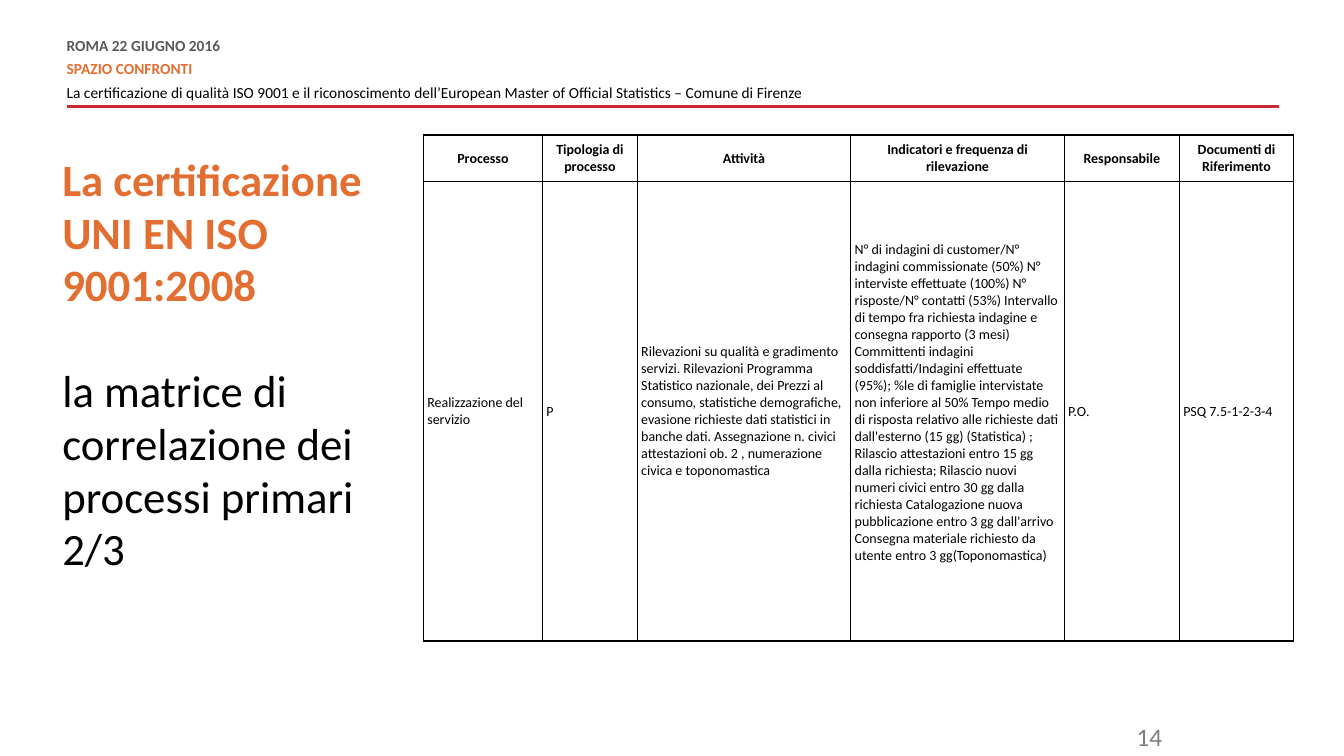
"""Build the slide with the matrix of primary processes."""
from dataclasses import dataclass

from lxml import etree
from pptx import Presentation
from pptx.dml.color import RGBColor
from pptx.enum.shapes import MSO_CONNECTOR
from pptx.enum.text import MSO_ANCHOR, PP_ALIGN
from pptx.oxml.ns import qn
from pptx.util import Cm, Pt

LEFT, CENTER, RIGHT = PP_ALIGN.LEFT, PP_ALIGN.CENTER, PP_ALIGN.RIGHT
TOP, MIDDLE = MSO_ANCHOR.TOP, MSO_ANCHOR.MIDDLE
STRAIGHT = MSO_CONNECTOR.STRAIGHT
FONT = "Calibri"
BLACK, ORANGE, RED = "000000", "E26F31", "C72A31"
DARK, GREY = "595959", "7F7F7F"


@dataclass
class Column:
    """One column of the matrix, with the space kept under its body."""
    width: float
    head: str
    body: str
    base: float = 0


@dataclass
class Line:
    """One line of the page header."""
    text: str
    hue: str
    bold: bool


HEADER = [
    Line("ROMA 22 GIUGNO 2016", DARK, True),
    Line("SPAZIO CONFRONTI", ORANGE, True),
    Line("La certificazione di qualità ISO 9001 e il riconoscimento dell’European "
         "Master of Official Statistics – Comune di Firenze", BLACK, False),
]

COLUMNS = [
    Column(3, "Processo", "Realizzazione del servizio"),
    Column(2.39, "Tipologia di processo", "P"),
    Column(5.38, "Attività",
           "Rilevazioni su qualità e gradimento servizi. Rilevazioni Programma "
           "Statistico nazionale, dei Prezzi al consumo, statistiche demografiche, "
           "evasione richieste dati statistici in banche dati. Assegnazione n. civici "
           "attestazioni ob. 2 , numerazione civica e toponomastica"),
    Column(5.38, "Indicatori e frequenza di rilevazione",
           "N° di indagini di customer/N° indagini commissionate (50%) N° interviste "
           "effettuate (100%) N° risposte/N° contatti (53%) Intervallo di tempo fra "
           "richiesta indagine e consegna rapporto (3 mesi) Committenti indagini "
           "soddisfatti/Indagini effettuate (95%); %le di famiglie intervistate non "
           "inferiore al 50% Tempo medio di risposta relativo alle richieste dati "
           "dall'esterno (15 gg) (Statistica) ; Rilascio attestazioni entro 15 gg "
           "dalla richiesta; Rilascio nuovi numeri civici entro 30 gg dalla richiesta "
           "Catalogazione nuova pubblicazione entro 3 gg dall'arrivo Consegna "
           "materiale richiesto da utente entro 3 gg(Toponomastica)", 0.43),
    Column(2.9, "Responsabile", "P.O."),
    Column(2.88, "Documenti di Riferimento", "PSQ 7.5-1-2-3-4"),
]
ROWS = [1.18, 11.57]


def paint(hue: str) -> RGBColor:
    """Turn a hex string into a colour."""
    return RGBColor.from_string(hue)


def write(frame, text: str, *, size: float, hue: str = BLACK, bold: bool = False,
          align=LEFT, pitch=1.0, before: float = 0, after: float = 0) -> None:
    """Add one formatted paragraph to a text frame."""
    para = frame.paragraphs[0]
    if para.runs:
        para = frame.add_paragraph()
    para.text = text
    para.alignment, para.line_spacing = align, pitch
    para.space_before, para.space_after = Pt(before), Pt(after)
    for run in para.runs:
        font = run.font
        font.name, font.size, font.bold = FONT, Pt(size), bold
        font.color.rgb = paint(hue)


def add_box(slide, left: float, top: float, width: float, height: float,
            anchor=TOP):
    """Add a wrapping text box without insets and return its frame."""
    box = slide.shapes.add_textbox(Cm(left), Cm(top), Cm(width), Cm(height))
    frame = box.text_frame
    frame.word_wrap, frame.vertical_anchor = True, anchor
    frame.margin_left = frame.margin_right = 0
    frame.margin_top = frame.margin_bottom = 0
    return frame


def add_rule(slide) -> None:
    """Draw the red rule under the header."""
    rule = slide.shapes.add_connector(STRAIGHT, Cm(32.23), Cm(2.69), Cm(1.68), Cm(2.69))
    rule.line.color.rgb, rule.line.width = paint(RED), Pt(2)
    etree.SubElement(rule._element.spPr, qn("a:effectLst"))


def edge(cell) -> None:
    """Give a cell thin black borders and no fill."""
    props = cell._tc.get_or_add_tcPr()
    for side in ("lnL", "lnR", "lnT", "lnB"):
        line = etree.SubElement(props, qn(f"a:{side}"), w=str(Pt(1)))
        fill = etree.SubElement(line, qn("a:solidFill"))
        etree.SubElement(fill, qn("a:srgbClr"), val=BLACK)
    cell.fill.background()


def fill_cell(cell, text: str, *, base: float = 0, bold: bool = False,
              align=LEFT) -> None:
    """Set the text, insets and borders of a cell."""
    cell.vertical_anchor = MIDDLE
    cell.margin_left = cell.margin_right = Cm(0.1)
    cell.margin_top, cell.margin_bottom = 0, Cm(base)
    write(cell.text_frame, text, size=10, bold=bold, align=align)
    edge(cell)


def add_matrix(slide) -> None:
    """Add the table of processes."""
    width = sum(col.width for col in COLUMNS)
    frame = slide.shapes.add_table(len(ROWS), len(COLUMNS), Cm(10.67), Cm(3.4),
                                   Cm(width), Cm(sum(ROWS)))
    table = frame.table
    table.first_row = table.horz_banding = False
    for row, height in zip(table.rows, ROWS):
        row.height = Cm(height)
    for i, col in enumerate(COLUMNS):
        table.columns[i].width = Cm(col.width)
        fill_cell(table.cell(0, i), col.head, bold=True, align=CENTER)
        fill_cell(table.cell(1, i), col.body, base=col.base)


def main() -> None:
    """Build and save the slide."""
    deck = Presentation()
    deck.slide_width, deck.slide_height = Cm(33.87), Cm(19.05)
    slide = deck.slides.add_slide(deck.slide_layouts[6])
    add_rule(slide)

    head = add_box(slide, 1.68, 0.99, 21.18, 1.6)
    for line in HEADER:
        write(head, line.text, size=11, hue=line.hue, bold=line.bold,
              pitch=Pt(10.8), after=6)

    title = add_box(slide, 1.57, 3.89, 8.41, 9.65)
    write(title, "La certificazione UNI EN ISO 9001:2008", size=32, hue=ORANGE,
          bold=True, pitch=0.98)
    write(title, "la matrice di correlazione dei processi primari\v2/3", size=32,
          pitch=0.98, before=38)

    add_matrix(slide)
    page = add_box(slide, 21.92, 18.06, 7.37, 1.02, MIDDLE)
    write(page, "14", size=18, hue=GREY, align=RIGHT)
    deck.save("out.pptx")


if __name__ == "__main__":
    main()
